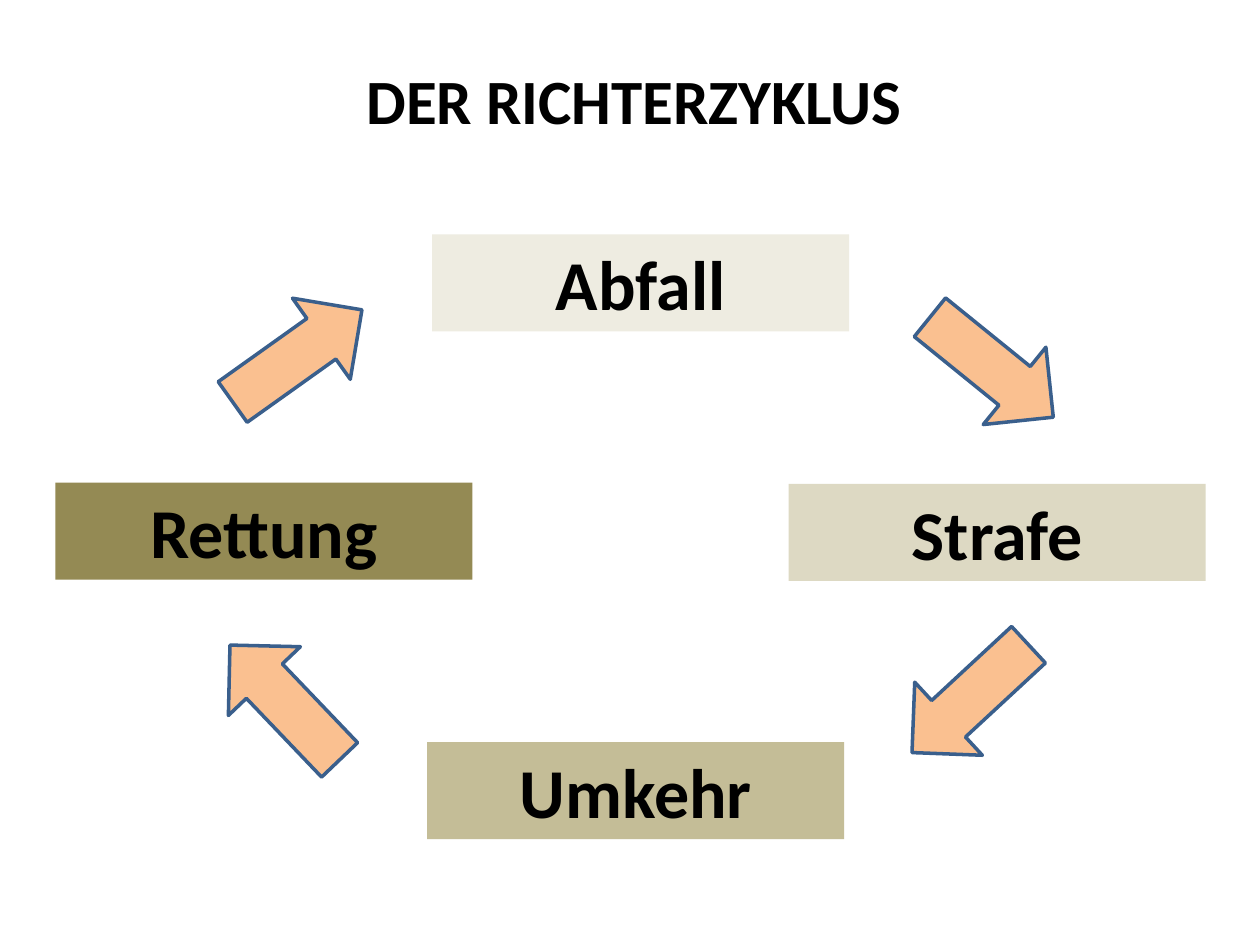
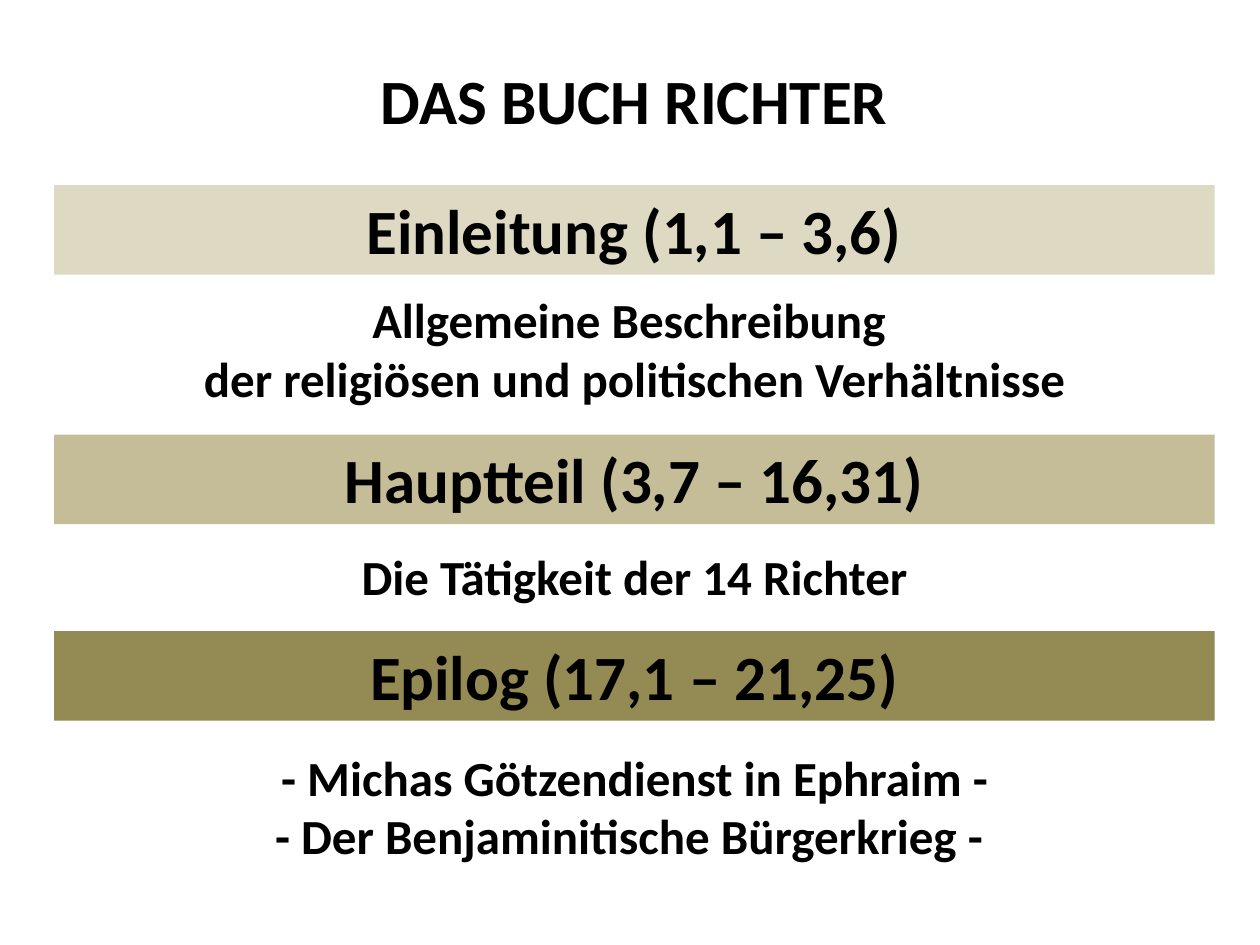
from lxml.etree import SubElement
from pptx import Presentation
from pptx.dml.color import RGBColor
from pptx.enum.shapes import MSO_SHAPE
from pptx.enum.text import MSO_ANCHOR, PP_ALIGN
from pptx.oxml.ns import qn
from pptx.util import Inches, Pt

FONT = "Calibri"
BLACK, WHITE = "000000", "FFFFFF"
CREAM, SAND, KHAKI, OLIVE = "EEECE1", "DDD9C3", "C4BD97", "948A54"
ARROW_FILL, ARROW_EDGE = "FAC090", "3A5F8C"

MARGIN, BAND_WIDTH = 0.43, 9.21
TITLE_TOP, TITLE_HEIGHT = 0.44, 0.63
BAND_HEIGHT = 0.71
STAGE_WIDTH, STAGE_HEIGHT = 3.31, 0.77
ARROW_WIDTH, ARROW_HEIGHT = 1.26, 0.79

CYCLE_TITLE = "DER RICHTERZYKLUS"
# stage, fill, left, top
STAGES = [
    ("Abfall", CREAM, 3.43, 1.86),
    ("Strafe", SAND, 6.26, 3.84),
    ("Umkehr", KHAKI, 3.39, 5.89),
    ("Rettung", OLIVE, 0.44, 3.83),
]
# left, top, rotation: each arrow leads from one stage to the next
ARROWS = [
    (7.24, 2.52, 39),
    (7.07, 5.15, 137.2),
    (1.63, 5.18, 226.3),
    (1.73, 2.43, 324.5),
]

BOOK_TITLE = "DAS BUCH RICHTER"
# heading, fill, heading top, summary lines, summary top, summary height
PARTS = [
    ("Einleitung (1,1 – 3,6)", SAND, 1.47,
     ["Allgemeine Beschreibung ", "der religiösen und politischen Verhältnisse"], 2.25, 1.04),
    ("Hauptteil (3,7 – 16,31)", KHAKI, 3.45,
     ["Die Tätigkeit der 14 Richter"], 4.29, 0.57),
    ("Epilog (17,1 – 21,25)", OLIVE, 5.01,
     ["- Michas Götzendienst in Ephraim -", "- Der Benjaminitische Bürgerkrieg - "], 5.88, 1.04),
]


def color(hex_string):
    return RGBColor.from_string(hex_string)


def add_text(slide, lines, left, top, width, height, size, fill=None, opacity=None):
    """Add a box of bold centred lines, filled if a fill is given."""
    box = slide.shapes.add_textbox(Inches(left), Inches(top), Inches(width), Inches(height))
    if fill:
        box.fill.solid()
        box.fill.fore_color.rgb = color(fill)
    if opacity:
        for tint in box.fill._xPr.iter(qn("a:srgbClr")):
            SubElement(tint, qn("a:alpha"), val=str(opacity * 1000))
    frame = box.text_frame
    frame.word_wrap = True
    frame.vertical_anchor = MSO_ANCHOR.TOP
    for index, line in enumerate(lines):
        paragraph = frame.add_paragraph() if index else frame.paragraphs[0]
        paragraph.alignment = PP_ALIGN.CENTER
        run = paragraph.add_run()
        run.text = line
        run.font.name = FONT
        run.font.size = Pt(size)
        run.font.bold = True
        run.font.color.rgb = color(BLACK)


def add_arrow(slide, left, top, rotation):
    arrow = slide.shapes.add_shape(MSO_SHAPE.RIGHT_ARROW, Inches(left), Inches(top),
                                   Inches(ARROW_WIDTH), Inches(ARROW_HEIGHT))
    arrow.rotation = rotation
    arrow.shadow.inherit = False
    arrow.fill.solid()
    arrow.fill.fore_color.rgb = color(ARROW_FILL)
    arrow.line.color.rgb = color(ARROW_EDGE)
    arrow.line.width = Pt(2)


def add_titled_slide(deck, title):
    slide = deck.slides.add_slide(deck.slide_layouts[6])
    add_text(slide, [title], MARGIN, TITLE_TOP, BAND_WIDTH, TITLE_HEIGHT,
             size=36, fill=WHITE, opacity=60)
    return slide


def main():
    deck = Presentation()
    deck.slide_width, deck.slide_height = Inches(10), Inches(7.5)

    cycle = add_titled_slide(deck, CYCLE_TITLE)
    for stage, fill, left, top in STAGES:
        add_text(cycle, [stage], left, top, STAGE_WIDTH, STAGE_HEIGHT, size=40, fill=fill)
    for left, top, rotation in ARROWS:
        add_arrow(cycle, left, top, rotation)

    book = add_titled_slide(deck, BOOK_TITLE)
    for heading, fill, top, summary, summary_top, summary_height in PARTS:
        add_text(book, [heading], MARGIN, top, BAND_WIDTH, BAND_HEIGHT, size=36, fill=fill)
        add_text(book, summary, MARGIN, summary_top, BAND_WIDTH, summary_height, size=28)

    deck.save("out.pptx")


if __name__ == "__main__":
    main()
